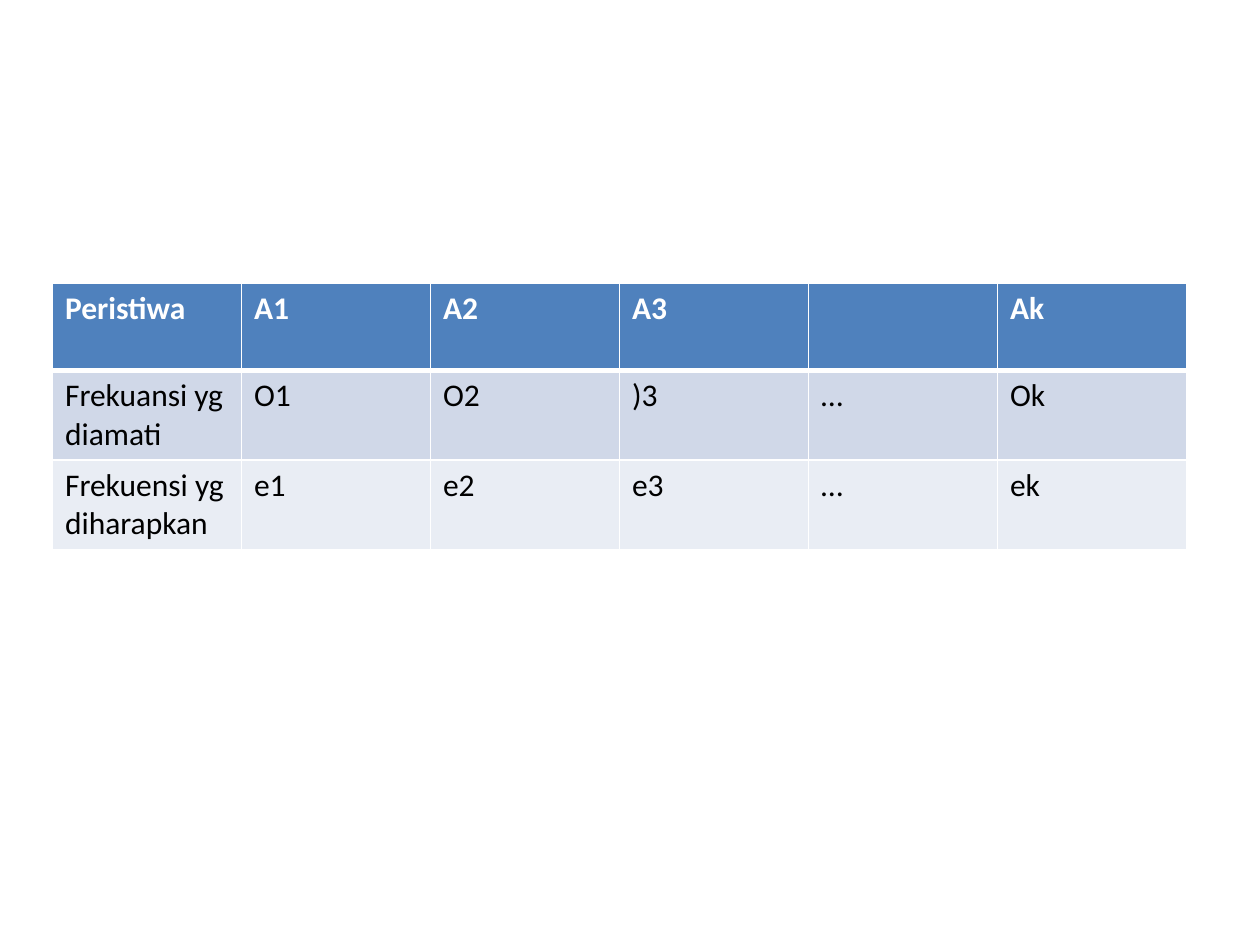
from dataclasses import dataclass

from lxml.etree import SubElement
from pptx import Presentation
from pptx.dml.color import RGBColor as Color
from pptx.oxml.ns import qn
from pptx.util import Pt


@dataclass(frozen=True)
class Theme:
    font: str = "Calibri"
    size: int = 18
    border: str = "FFFFFF"
    thin: int = 1
    thick: int = 3
    header_text: str = "FFFFFF"
    body_text: str = "000000"
    row_fills: tuple = ("4F81BD", "D0D8E8", "E9EDF4")


THEME = Theme()
FREQUENCIES = (
    ("Peristiwa", "A1", "A2", "A3", "", "Ak"),
    ("Frekuansi yg diamati", "O1", "O2", ")3", "…", "Ok"),
    ("Frekuensi yg diharapkan", "e1", "e2", "e3", "…", "ek"),
)
LEFT, TOP = 30, 162
COLUMN_WIDTH, ROW_HEIGHT = 108, 49.7


def set_border(cell, side, width):
    """Draw one side (L, R, T or B) of a cell; call before filling the cell."""
    properties = cell._tc.get_or_add_tcPr()
    line = SubElement(properties, qn(f"a:ln{side}"), w=str(Pt(width)))
    fill = SubElement(line, qn("a:solidFill"))
    SubElement(fill, qn("a:srgbClr"), val=THEME.border)


def format_cell(cell, row):
    is_header = row == 0
    widths = {
        "L": THEME.thin,
        "R": THEME.thin,
        "T": THEME.thick if row == 1 else THEME.thin,
        "B": THEME.thick if is_header else THEME.thin,
    }
    for side, width in widths.items():
        set_border(cell, side, width)
    cell.fill.solid()
    cell.fill.fore_color.rgb = Color.from_string(THEME.row_fills[row])

    color = THEME.header_text if is_header else THEME.body_text
    for para in cell.text_frame.paragraphs:
        for item in (para, *para.runs):
            item.font.name = THEME.font
            item.font.size = Pt(THEME.size)
            item.font.bold = is_header
            item.font.color.rgb = Color.from_string(color)


def add_frequency_table(page):
    rows, columns = len(FREQUENCIES), len(FREQUENCIES[0])
    frame = page.shapes.add_table(
        rows, columns, Pt(LEFT), Pt(TOP),
        Pt(columns * COLUMN_WIDTH), Pt(rows * ROW_HEIGHT),
    )
    for row, texts in enumerate(FREQUENCIES):
        for column, text in enumerate(texts):
            cell = frame.table.cell(row, column)
            cell.text_frame.text = text
            format_cell(cell, row)


def main():
    deck = Presentation()
    deck.slide_width, deck.slide_height = Pt(720), Pt(540)
    page = deck.slides.add_slide(deck.slide_layouts.get_by_name("Blank"))
    add_frequency_table(page)
    deck.save("out.pptx")


if __name__ == "__main__":
    main()
